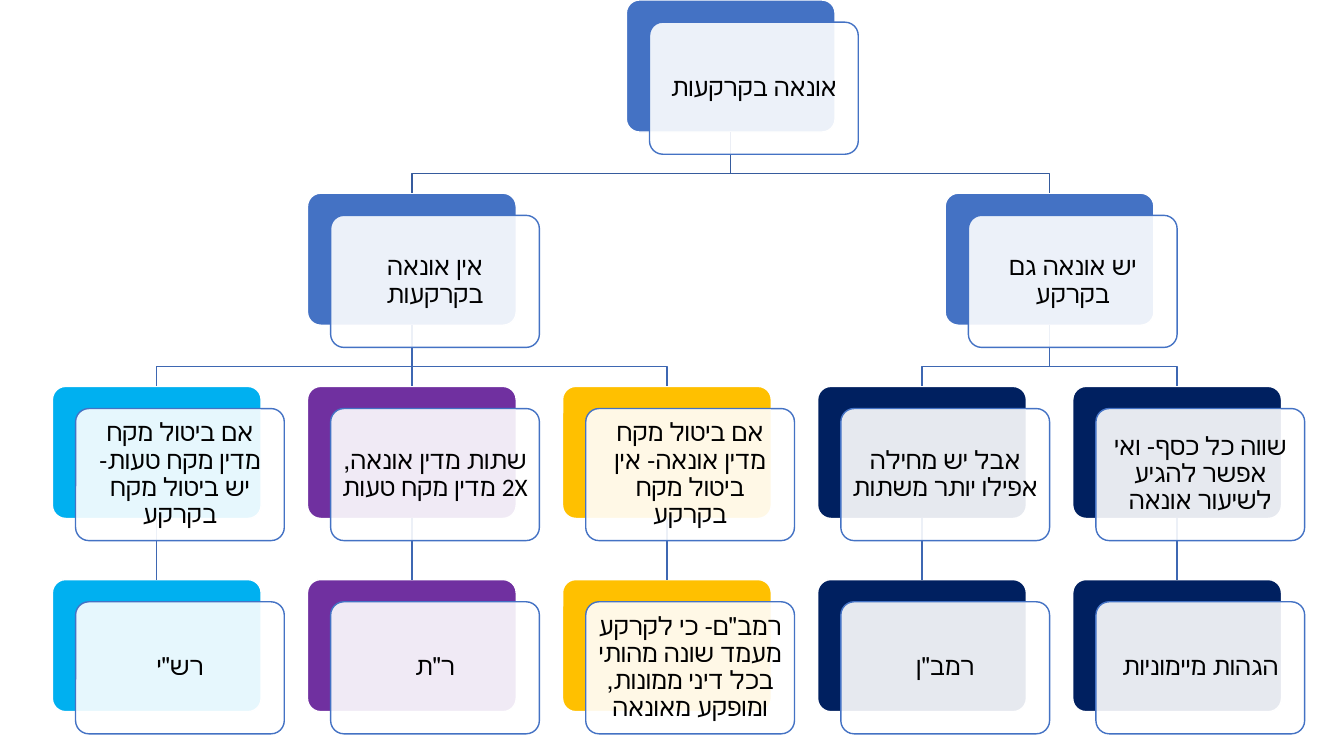
from dataclasses import dataclass

from lxml import etree
from pptx import Presentation
from pptx.dml.color import RGBColor
from pptx.enum.lang import MSO_LANGUAGE_ID as LANG
from pptx.enum.shapes import MSO_CONNECTOR as CONN, MSO_SHAPE as SHAPE
from pptx.enum.text import MSO_ANCHOR as ANCHOR, PP_ALIGN as ALIGN
from pptx.oxml.ns import qn
from pptx.util import Inches, Pt

FONT = "Calibri"
BLUE, NAVY, GOLD, PURPLE, CYAN = "4472C4", "002060", "FFC000", "7030A0", "00B0F0"
TOP_LINK, LINK = "365B9D", "3E67B2"

# Tree grid, in inches
LEFT, COL_STEP = 0.52, 2.53
ROW_STEP = 5.75 / 3
CARD_W, CARD_H = 2.07, 1.31
FRONT_DX, FRONT_DY = 0.23, 0.22
BEND = 0.41


@dataclass
class Card:
    text: str
    row: int
    col: float
    color: str
    parent: "Card" = None

    @property
    def left(self):
        return LEFT + self.col * COL_STEP

    @property
    def top(self):
        return self.row * ROW_STEP

    @property
    def center(self):
        return self.left + CARD_W / 2

    @property
    def bottom(self):
        return self.top + CARD_H


def rgb(color):
    return RGBColor.from_string(color)


def set_line(sp, color):
    sp.line.color.rgb = rgb(color)
    sp.line.width = Pt(1)


def add_box(slide, left, top, fill, line, alpha=None):
    sp = slide.shapes.add_shape(SHAPE.ROUNDED_RECTANGLE, Inches(left), Inches(top),
                                Inches(CARD_W), Inches(CARD_H))
    sp.adjustments[0] = 0.1
    sp.shadow.inherit = False
    sp.fill.solid()
    sp.fill.fore_color.rgb = rgb(fill)
    if alpha is not None:
        clr = sp._element.spPr.find(qn("a:solidFill")).find(qn("a:srgbClr"))
        etree.SubElement(clr, qn("a:alpha")).set("val", str(alpha * 1000))
    set_line(sp, line)
    return sp


def set_text(sp, text, size=18, color="000000", font=FONT, inset=0.07):
    tf = sp.text_frame
    tf.word_wrap = True
    tf.vertical_anchor = ANCHOR.MIDDLE
    tf.margin_left = tf.margin_right = Inches(inset)
    tf.margin_top = tf.margin_bottom = Inches(inset)
    p = tf.paragraphs[0]
    p.alignment = ALIGN.CENTER
    p.line_spacing = 0.9
    p.space_after = Pt(0.35 * size)
    p._p.get_or_add_pPr().set("rtl", "1")
    r = p.add_run()
    r.text = text
    r.font.size = Pt(size)
    r.font.color.rgb = rgb(color)
    r.font.name = font
    r.font.language_id = LANG.HEBREW


def add_straight_link(slide, parent_box, child_box, color):
    link = slide.shapes.add_connector(CONN.STRAIGHT, 0, 0, 0, 0)
    link.begin_connect(parent_box, 2)
    link.end_connect(child_box, 0)
    set_line(link, color)
    etree.SubElement(link._element.spPr, qn("a:effectLst"))


def add_bent_link(slide, parent, child, color):
    bend = parent.bottom + BEND
    points = [(parent.center, bend), (child.center, bend), (child.center, child.top)]
    builder = slide.shapes.build_freeform(Inches(parent.center), Inches(parent.bottom))
    builder.add_line_segments([(Inches(x), Inches(y)) for x, y in points], close=False)
    link = builder.convert_to_shape()
    link.shadow.inherit = False
    link.fill.background()
    set_line(link, color)


def build_cards():
    root = Card("אונאה בקרקעות", 0, 2.25, BLUE)
    applies = Card("יש אונאה גם בקרקע", 1, 3.5, BLUE, root)
    exempt = Card("אין אונאה בקרקעות", 1, 1, BLUE, root)
    # Each column: parent, colour, opinion, source of the opinion
    columns = [
        (exempt, CYAN, "אם ביטול מקח מדין מקח טעות- יש ביטול מקח בקרקע", 'רש"י'),
        (exempt, PURPLE, "שתות מדין אונאה, 2X מדין מקח טעות", 'ר"ת'),
        (exempt, GOLD, "אם ביטול מקח מדין אונאה- אין ביטול מקח בקרקע",
         'רמב"ם- כי לקרקע מעמד שונה מהותי בכל דיני ממונות, ומופקע מאונאה'),
        (applies, NAVY, "אבל יש מחילה אפילו יותר משתות", 'רמב"ן'),
        (applies, NAVY, "שווה כל כסף- ואי אפשר להגיע לשיעור אונאה", "הגהות מיימוניות"),
    ]
    cards = [root, applies, exempt]
    for col, (parent, color, opinion, source) in enumerate(columns):
        opinion_card = Card(opinion, 2, col, color, parent)
        cards += [opinion_card, Card(source, 3, col, color, opinion_card)]
    return cards


def main():
    prs = Presentation()
    prs.slide_width, prs.slide_height = Inches(13.33), Inches(7.5)
    slide = prs.slides.add_slide(prs.slide_layouts[6])
    cards = build_cards()

    # Coloured back plates
    backs = {id(c): add_box(slide, c.left, c.top, c.color, "FFFFFF") for c in cards}

    # Links from parent to child
    for card in cards[1:]:
        parent = card.parent
        color = TOP_LINK if parent.row == 0 else LINK
        if parent.col == card.col:
            add_straight_link(slide, backs[id(parent)], backs[id(card)], color)
        else:
            add_bent_link(slide, parent, card, color)

    # Translucent front plates with the text
    for card in cards:
        front = add_box(slide, card.left + FRONT_DX, card.top + FRONT_DY,
                        "FFFFFF", BLUE, alpha=90)
        set_text(front, card.text)

    prs.save("out.pptx")


if __name__ == "__main__":
    main()
